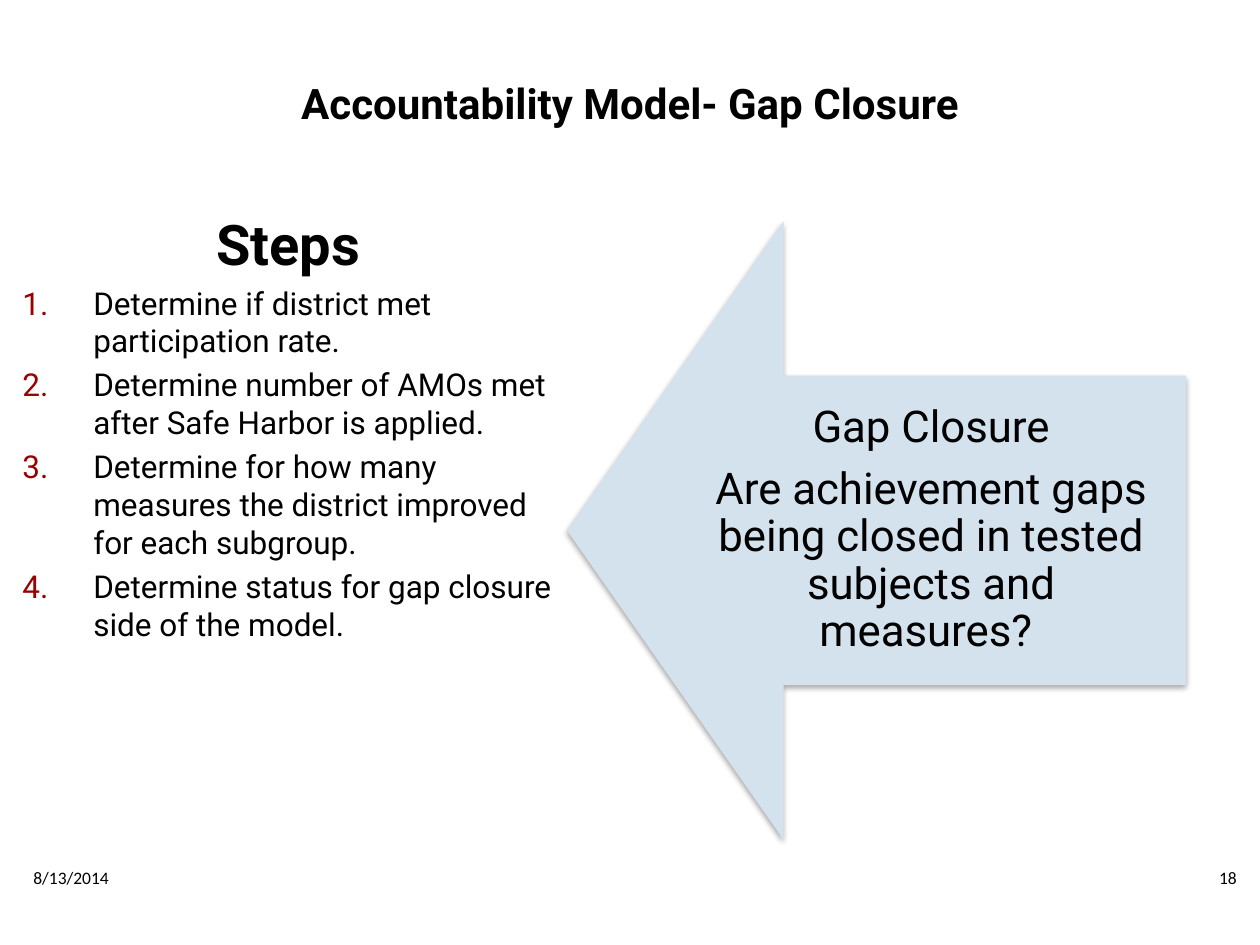
from typing import NamedTuple

from lxml import etree
from pptx import Presentation, util as u
from pptx.dml.color import RGBColor
from pptx.enum import shapes, text
from pptx.oxml import parse_xml
from pptx.oxml.ns import nsdecls, qn

PX_PER_INCH = 126
CENTER, LEFT, RIGHT = text.PP_ALIGN.CENTER, text.PP_ALIGN.LEFT, text.PP_ALIGN.RIGHT
TOP, MIDDLE = text.MSO_ANCHOR.TOP, text.MSO_ANCHOR.MIDDLE


class Box(NamedTuple):
    left: int
    top: int
    width: int
    height: int


class Line(NamedTuple):
    words: str
    size: int
    align: text.PP_ALIGN = LEFT
    bold: bool = False
    font: str = "Roboto"
    numbered: bool = False
    format: dict = {}


class Block(NamedTuple):
    box: Box
    lines: list[Line]
    frame: dict = {}


def px(length: int) -> u.Emu:
    return u.Emu(round(length * u.Inches(1) / PX_PER_INCH))


def color(hex_value: str) -> RGBColor:
    return RGBColor.from_string(hex_value)


def apply(target, values: dict) -> None:
    for name, value in values.items():
        setattr(target, name, value)


def number(paragraph, hex_value: str) -> None:
    props = paragraph._p.get_or_add_pPr()
    props.set("marL", str(px(71)))
    props.set("indent", str(-px(71)))
    bullet_color = etree.SubElement(props, qn("a:buClr"))
    etree.SubElement(bullet_color, qn("a:srgbClr"), val=hex_value)
    etree.SubElement(props, qn("a:buFont"), typeface="+mj-lt")
    etree.SubElement(props, qn("a:buAutoNum"), type="arabicPeriod")


def draw_block(slide, block: Block) -> None:
    frame = slide.shapes.add_textbox(*map(px, block.box)).text_frame
    apply(frame, {"word_wrap": True, "vertical_anchor": TOP, **block.frame})
    for index, line in enumerate(block.lines):
        paragraph = frame.add_paragraph() if index else frame.paragraphs[0]
        apply(paragraph, {"alignment": line.align, **line.format})
        if line.numbered:
            number(paragraph, "990000")
        run = paragraph.add_run()
        run.text = line.words
        apply(run.font, {"name": line.font, "size": u.Pt(line.size), "bold": line.bold})
        run.font.color.rgb = color("000000")


def draw_arrow(slide, box: Box, fill: str) -> None:
    arrow = slide.shapes.add_shape(shapes.MSO_SHAPE.DOWN_ARROW, *map(px, box))
    arrow.rotation = 90
    arrow.adjustments[0] = 0.5
    arrow.adjustments[1] = 0.35
    arrow.fill.solid()
    arrow.fill.fore_color.rgb = color(fill)
    arrow.line.fill.background()
    arrow.shadow.inherit = False
    effects = arrow._element.spPr.find(qn("a:effectLst"))
    effects.append(parse_xml(
        f'<a:outerShdw {nsdecls("a")} blurRad="{u.Pt(3.1)}" dist="{u.Pt(1.8)}" '
        'dir="5400000" rotWithShape="0"><a:srgbClr val="000000">'
        '<a:alpha val="35000"/></a:srgbClr></a:outerShdw>'))


STEPS = [
    "Determine if district met participation rate.",
    "Determine number of AMOs met after Safe Harbor is applied.",
    "Determine for how many measures the district improved for each subgroup.",
    "Determine status for gap closure side of the model.",
]
GAP_LINES = ["Gap Closure", "Are achievement gaps being closed in tested subjects and measures? "]
STEP_FORMAT = {"space_before": u.Pt(3.6)}
GAP_FORMAT = {"line_spacing": 0.9, "space_after": u.Pt(8.75)}
GAP_INSETS = {f"margin_{side}": px(24) for side in ("left", "top", "right", "bottom")}

BLOCKS = [
    Block(Box(63, 38, 1134, 130),
          [Line("Accountability Model- Gap Closure", 24, CENTER, bold=True)],
          {"vertical_anchor": MIDDLE}),
    Block(Box(676, 375, 510, 310),
          [Line(words, 25, CENTER, format=GAP_FORMAT) for words in GAP_LINES],
          {"vertical_anchor": MIDDLE, **GAP_INSETS}),
    Block(Box(21, 861, 294, 66), [Line("8/13/2014", 10, font="Calibri")]),
    Block(Box(955, 861, 294, 66), [Line("18", 10, RIGHT, font="Calibri")]),
    Block(Box(10, 199, 557, 620),
          [Line("Steps", 32, CENTER, bold=True)]
          + [Line(step, 18, numbered=True, format=STEP_FORMAT) for step in STEPS],
          {"margin_top": px(11)}),
]


def main() -> None:
    deck = Presentation()
    apply(deck, {"slide_width": px(1260), "slide_height": px(945)})
    slide = deck.slides.add_slide(deck.slide_layouts[6])
    draw_arrow(slide, Box(567, 221, 619, 619), "D4E2EE")
    for block in BLOCKS:
        draw_block(slide, block)
    deck.save("out.pptx")


if __name__ == "__main__":
    main()
